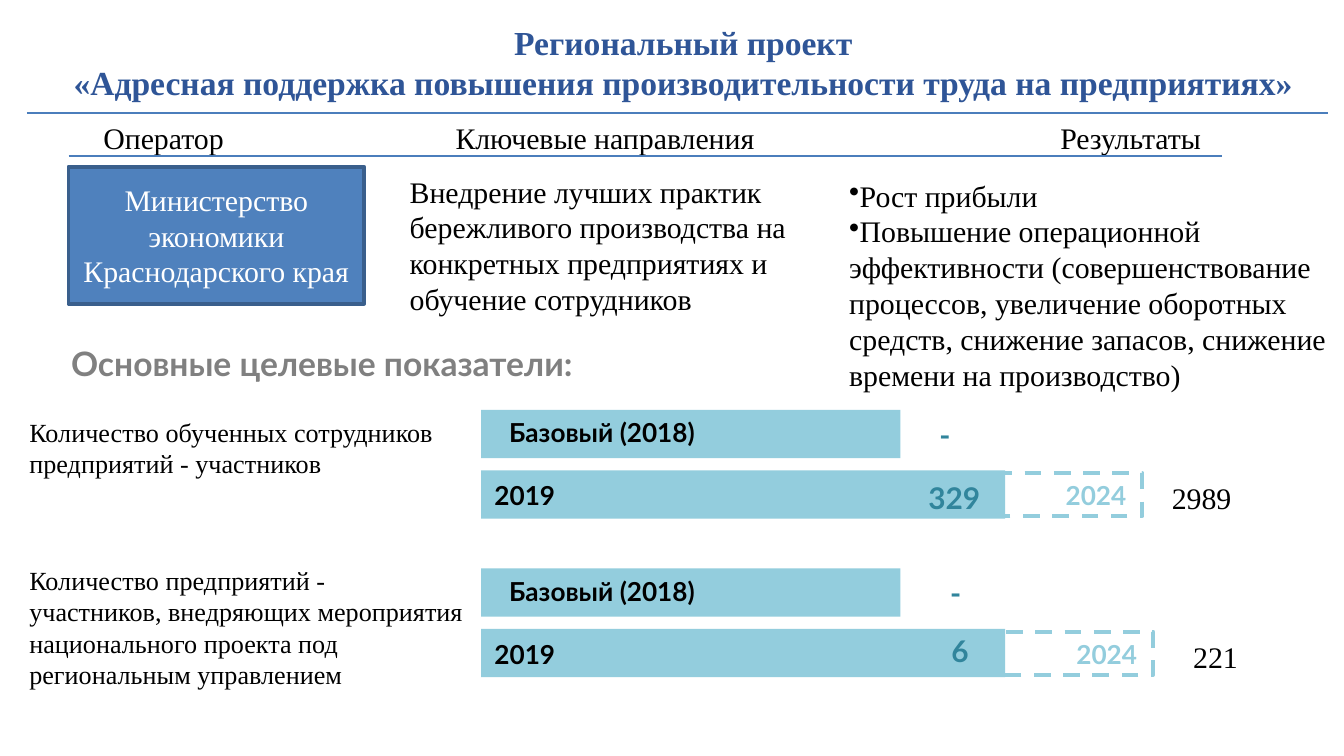
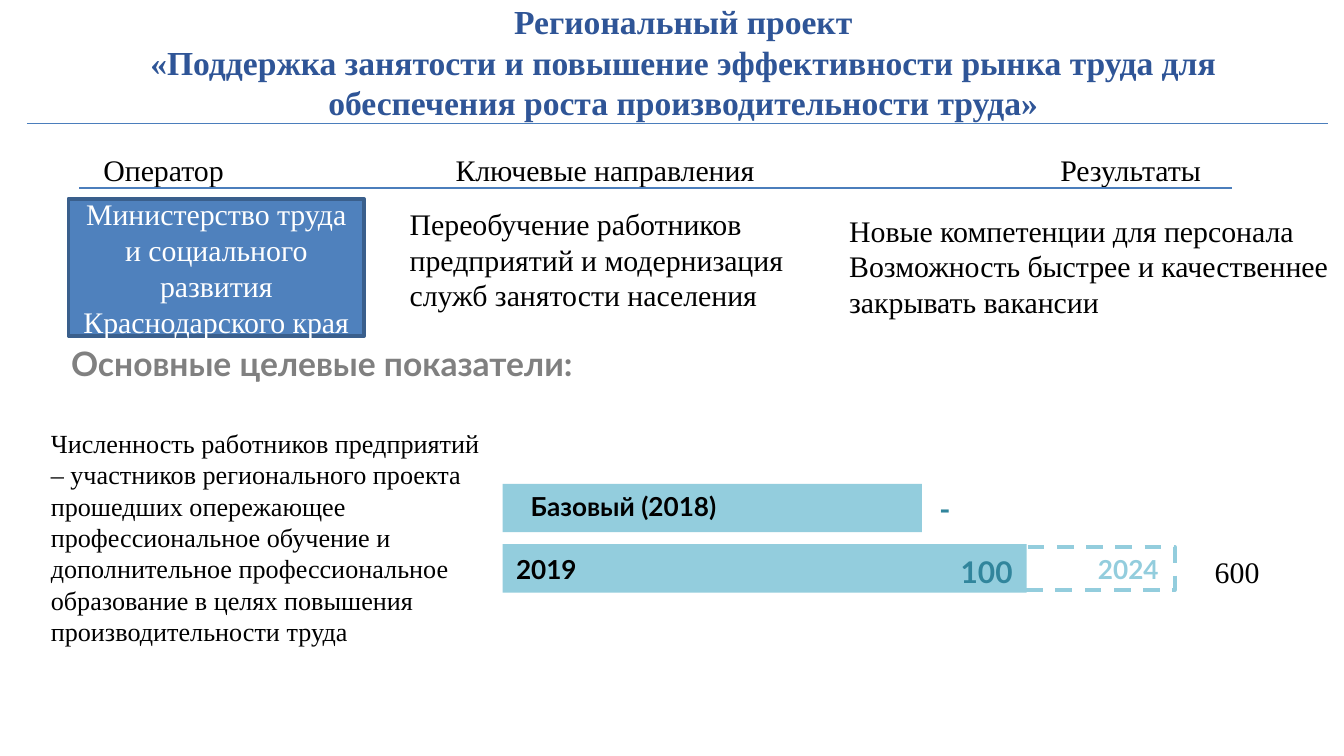
import pptx
import pptx.dml.color
import pptx.enum.dml
import pptx.enum.shapes
import pptx.enum.text
import pptx.oxml
import pptx.oxml.ns
import pptx.util

PX = 9144  # EMU in one px, 100 px to the inch
SERIF, SANS = "Times New Roman", "Lato"
COLORS = {
    "title": "2F5597", "text": "000000", "white": "FFFFFF", "gray": "808080",
    "box": "4F81BD", "box_edge": "3A5F8C", "rule": "4B7EBC",
    "bar": "93CDDD", "value": "31859C",
}
ALIGN = pptx.enum.text.PP_ALIGN
ANCHOR = pptx.enum.text.MSO_ANCHOR
AUTO = pptx.enum.text.MSO_AUTO_SIZE


def rgb(name):
    return pptx.dml.color.RGBColor.from_string(COLORS[name])


def add_xml(parent, xml):
    ns = pptx.oxml.ns.nsdecls("a")
    parent.append(pptx.oxml.parse_xml(xml.replace("/>", f" {ns}/>", 1)
                                      if xml.endswith("/>") and xml.count("<") == 1
                                      else xml.replace(">", f" {ns}>", 1)))


def write(tf, text, size=16, font=SERIF, color="text", bold=False,
          align=ALIGN.LEFT, bullet=False, tabs=()):
    """Fill a text frame, one paragraph for each line of text."""
    for i, line in enumerate(text.split("\n")):
        p = tf.paragraphs[0] if i == 0 else tf.add_paragraph()
        p.alignment = align
        ppr = p._p.get_or_add_pPr()
        if bullet:
            ppr.set("marL", "0")
            ppr.set("indent", "0")
            add_xml(ppr, '<a:buChar char="•"/>')
        if tabs:
            stops = "".join(f'<a:tab pos="{x * PX}" algn="l"/>' for x in tabs)
            add_xml(ppr, f"<a:tabLst>{stops}</a:tabLst>")
        r = p.add_run()
        r.text = line
        r.font.size = pptx.util.Pt(size)
        r.font.name = font
        r.font.bold = bold
        r.font.color.rgb = rgb(color)


class Deck:
    def __init__(self):
        self.prs = pptx.Presentation()
        self.prs.slide_width = 1000 * PX
        self.prs.slide_height = pptx.util.Inches(5.625)
        self.s = None

    def new_slide(self):
        self.s = self.prs.slides.add_slide(self.prs.slide_layouts[6])

    def text(self, x, y, w, h, text, wrap=True, grow=True, inset=10,
             anchor=ANCHOR.TOP, **fmt):
        sp = self.s.shapes.add_textbox(x * PX, y * PX, w * PX, h * PX)
        tf = sp.text_frame
        tf.word_wrap = wrap
        tf.auto_size = AUTO.SHAPE_TO_FIT_TEXT if grow else AUTO.NONE
        tf.vertical_anchor = anchor
        tf.margin_left = inset * PX
        write(tf, text, **fmt)

    def tag(self, x, y, w, text, size=14, color="text", font=SANS,
            align=ALIGN.RIGHT):
        """One-line caption that does not wrap."""
        self.text(x, y, w, 34 if size == 14 else 37, text, wrap=False, size=size,
                  color=color, font=font, bold=font == SANS, align=align)

    def value(self, x, y, w, text, **fmt):
        self.tag(x, y, w, text, size=16, align=ALIGN.LEFT, **fmt)

    def rect(self, x, y, w, h, fill="bar", edge=None, width=2, dash=False):
        sp = self.s.shapes.add_shape(pptx.enum.shapes.MSO_SHAPE.RECTANGLE,
                                     x * PX, y * PX, w * PX, h * PX)
        sp.shadow.inherit = False
        sp.fill.solid()
        sp.fill.fore_color.rgb = rgb(fill)
        if edge:
            sp.line.color.rgb = rgb(edge)
            sp.line.width = pptx.util.Pt(width)
        else:
            sp.line.fill.background()
        if dash:
            sp.line.dash_style = pptx.enum.dml.MSO_LINE.DASH
        return sp

    def rule(self, x, y, w):
        sp = self.s.shapes.add_connector(pptx.enum.shapes.MSO_CONNECTOR.STRAIGHT,
                                         x * PX, y * PX, (x + w) * PX, y * PX)
        sp.line.color.rgb = rgb("rule")
        sp.line.width = pptx.util.Pt(0.75)
        add_xml(sp._element.spPr, "<a:effectLst/>")

    def header(self, title, rule_y):
        self.text(43, 21, 931, 50, f"Региональный проект\n{title}", grow=False,
                  anchor=ANCHOR.MIDDLE, size=18, color="title", bold=True,
                  align=ALIGN.CENTER)
        self.rule(20, rule_y, 968)

    def columns(self, y, rule_x, operator, direction, direction_h):
        self.text(51, y, 900, 418, "Оператор\tКлючевые направления\tРезультаты",
                  grow=False, inset=26, tabs=(262, 712))
        self.rule(rule_x, y + 32, 858)
        tf = self.rect(51, y + 40, 220, 102, "box", "box_edge").text_frame
        tf.word_wrap = True
        tf.vertical_anchor = ANCHOR.MIDDLE
        write(tf, operator, color="white", align=ALIGN.CENTER)
        self.text(295, y + 40, 339, direction_h, direction)
        self.tag(43, 250, 415, "Основные целевые показатели:", size=18,
                 color="gray", align=ALIGN.LEFT)

    def indicator(self, x, y, label, label_box, target_x, base_x, fact, target):
        """Label, base bar, 2019 bar and dashed 2024 target.

        fact is (x, y, width, text); target is (x, width, text).
        """
        row = y + 47
        self.text(*label_box, label, size=14)
        self.rect(target_x, row, 429, 32, "white", "bar", 2.25, dash=True)
        self.rect(x, y, 312, 36)
        self.tag(x, y, 169, "Базовый (2018)")
        self.value(base_x, y, 29, "-", color="value")
        self.rect(x, y + 45, 390, 36)
        self.tag(x, row, 65, "2019")
        self.tag(target_x + 362, row, 65, "2024", color="bar")
        self.value(*fact, color="value")
        target_left, target_w, target_text = target
        self.value(target_left, row, target_w, target_text, font=SERIF)


def productivity_slide(deck):
    deck.new_slide()
    deck.header("«Адресная поддержка повышения производительности труда "
                "на предприятиях»", 84)
    deck.columns(84, 51, "Министерство экономики Краснодарского края",
                 "Внедрение лучших практик бережливого производства на "
                 "конкретных предприятиях и обучение сотрудников", 118)
    deck.text(622, 127, 378, 172,
              "Рост прибыли\nПовышение операционной эффективности "
              "(совершенствование процессов, увеличение оборотных средств, "
              "снижение запасов, снижение времени на производство)", bullet=True)
    deck.indicator(358, 305,
                   "Количество обученных сотрудников предприятий - участников",
                   (12, 305, 343, 57), target_x=421, base_x=689,
                   fact=(681, 352, 59, "329"), target=(862, 65, "2989"))
    deck.indicator(358, 423,
                   "Количество предприятий - участников, внедряющих мероприятия "
                   "национального проекта под региональным управлением",
                   (12, 415, 343, 104), target_x=429, base_x=697,
                   fact=(698, 466, 33, "6"), target=(878, 54, "221"))


def employment_slide(deck):
    deck.new_slide()
    deck.header("«Поддержка занятости и повышение эффективности рынка труда "
                "для обеспечения роста производительности труда»", 92)
    deck.columns(108, 59,
                 "Министерство труда и социального развития Краснодарского края",
                 "Переобучение работников предприятий и модернизация служб "
                 "занятости населения", 91)
    deck.text(622, 153, 378, 119,
              "Новые компетенции для персонала\n"
              "Возможность быстрее и качественнее закрывать вакансии")
    deck.indicator(374, 360,
                   "Численность работников предприятий – участников регионального "
                   "проекта прошедших опережающее профессиональное обучение и "
                   "дополнительное профессиональное образование в целях повышения "
                   "производительности труда",
                   (28, 313, 343, 175), target_x=445, base_x=689,
                   fact=(705, 407, 59, "100"), target=(894, 54, "600"))


def main():
    deck = Deck()
    productivity_slide(deck)
    employment_slide(deck)
    deck.prs.save("out.pptx")


if __name__ == "__main__":
    main()
